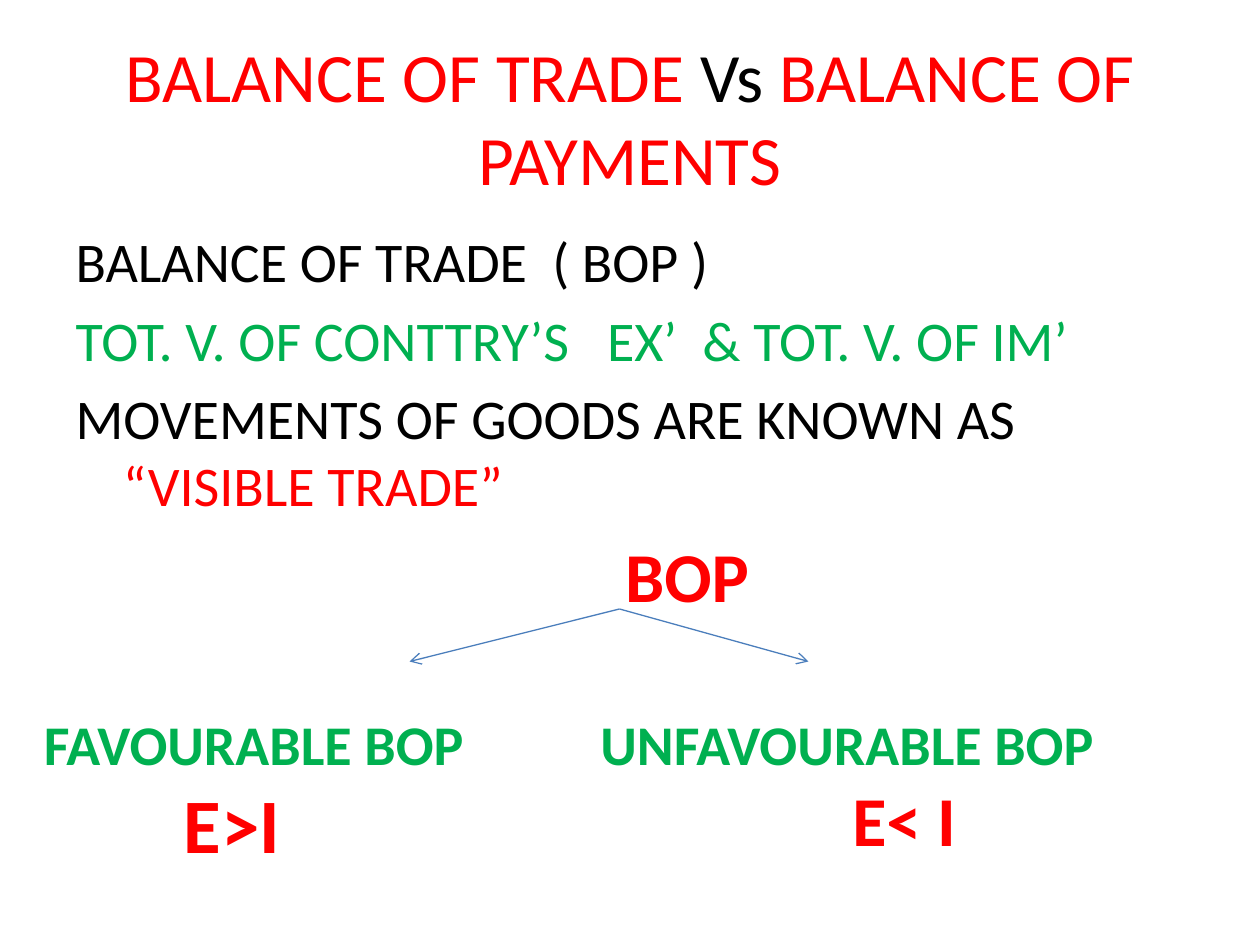
from dataclasses import dataclass

from lxml import etree
from pptx import Presentation
from pptx.dml.color import RGBColor
from pptx.enum.shapes import MSO_CONNECTOR
from pptx.enum.text import MSO_ANCHOR, MSO_AUTO_SIZE, PP_ALIGN
from pptx.oxml.ns import qn
from pptx.util import Pt

STRAIGHT = MSO_CONNECTOR.STRAIGHT
MIDDLE = MSO_ANCHOR.MIDDLE
FIXED = MSO_AUTO_SIZE.NONE
CENTER = PP_ALIGN.CENTER


@dataclass(frozen=True)
class Theme:
    font: str = "Calibri"
    black: str = "000000"
    red: str = "FF0000"
    green: str = "00B050"
    arrow: str = "4B7EBC"
    title: float = 39.6
    body: float = 32
    heading: float = 40
    formula: float = 44


THEME = Theme()


def add_text(para, text, size=THEME.body, color=THEME.black, bold=False):
    span = para.add_run()
    span.text = text
    span.font.name = THEME.font
    span.font.size = Pt(size)
    span.font.bold = bold
    span.font.color.rgb = RGBColor.from_string(color)


class SlideBuilder:
    def __init__(self, page, theme):
        self.page = page
        self.theme = theme

    def place(self, shape, left, top, width, height):
        shape.left, shape.top = Pt(left), Pt(top)
        shape.width, shape.height = Pt(width), Pt(height)
        shape.text_frame.word_wrap = True
        shape.text_frame.auto_size = FIXED
        return shape.text_frame

    def fill(self, frame, paragraphs):
        for index, spans in enumerate(paragraphs):
            para = frame.add_paragraph() if index else frame.paragraphs[0]
            for text, style in spans:
                add_text(para, text, **style)

    def indent(self, para, left):
        properties = para._p.get_or_add_pPr()
        properties.set("marL", str(Pt(left)))
        properties.set("indent", "0")

    def title(self, spans, *bounds):
        frame = self.place(self.page.shapes.title, *bounds)
        frame.vertical_anchor = MIDDLE
        self.fill(frame, [spans])
        frame.paragraphs[0].alignment = CENTER

    def body(self, paragraphs, last_indent, *bounds):
        frame = self.place(self.page.placeholders[1], *bounds)
        self.fill(frame, paragraphs)
        for para in frame.paragraphs:
            etree.SubElement(para._p.get_or_add_pPr(), qn("a:buNone"))
        self.indent(frame.paragraphs[-1], last_indent)

    def outcome(self, heading, formula, size, indent, *bounds):
        box = self.page.shapes.add_textbox(0, 0, 0, 0)
        frame = self.place(box, *bounds)
        self.fill(frame, [
            [(heading, dict(color=self.theme.green, bold=True))],
            [(formula, dict(size=size, color=self.theme.red, bold=True))],
        ])
        self.indent(frame.paragraphs[1], indent)

    def arrow(self, start, end):
        points = [Pt(value) for value in (*start, *end)]
        connector = self.page.shapes.add_connector(STRAIGHT, *points)
        connector.line.width = Pt(0.75)
        connector.line.color.rgb = RGBColor.from_string(self.theme.arrow)
        line = connector.line._get_or_add_ln()
        etree.SubElement(line, qn("a:tailEnd"), type="arrow")
        etree.SubElement(connector._element.spPr, qn("a:effectLst"))


def main():
    deck = Presentation()
    deck.slide_width, deck.slide_height = Pt(720), Pt(540)
    page = deck.slides.add_slide(deck.slide_layouts[1])
    builder = SlideBuilder(page, THEME)

    title_red = dict(size=THEME.title, color=THEME.red)
    builder.title([
        ("BALANCE OF TRADE ", title_red),
        ("Vs", dict(size=THEME.title)),
        (" BALANCE OF PAYMENTS", title_red),
    ], 36, 21.6, 648, 90)

    builder.body([
        [("BALANCE OF TRADE  ( BOP )", {})],
        [("TOT. V. OF CONTTRY’S   EX’  & TOT. V. OF IM’", dict(color=THEME.green))],
        [("MOVEMENTS OF GOODS ARE KNOWN AS ", {}),
         ("“VISIBLE TRADE”", dict(color=THEME.red))],
        [("BOP", dict(size=THEME.heading, color=THEME.red, bold=True))],
    ], 314, 36, 126, 648, 390)

    for end_left in (234, 462):
        builder.arrow((354, 348), (end_left, 378))

    builder.outcome("FAVOURABLE BOP", "E>I", THEME.formula, 80,
                    18, 402, 288, 99)
    builder.outcome("UNFAVOURABLE BOP", "E< I", THEME.heading, 144,
                    336, 402, 300, 94)

    deck.save("out.pptx")


if __name__ == "__main__":
    main()
